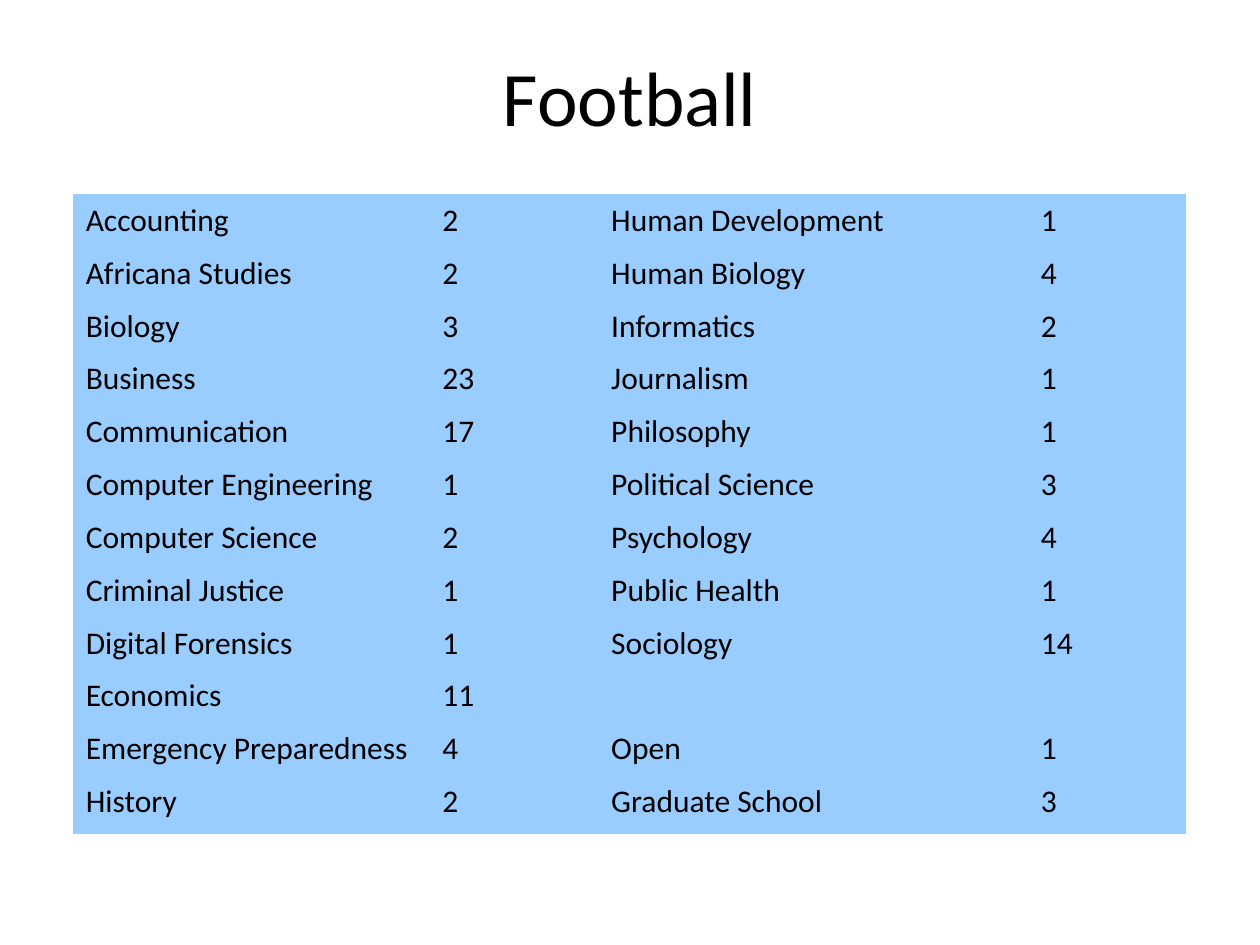
from dataclasses import dataclass

from pptx import Presentation
from pptx.dml.color import RGBColor
from pptx.enum.text import MSO_ANCHOR, PP_ALIGN
from pptx.util import Pt


@dataclass(frozen=True)
class Theme:
    font: str = "Calibri"
    text: RGBColor = RGBColor(0, 0, 0)
    fill: RGBColor = RGBColor(0x99, 0xCC, 0xFF)
    title_size: int = 44
    body_size: int = 18


NO_STYLE_NO_GRID = "{2D5ABB26-0587-4C30-8999-92F81FD0307C}"
COLUMN_WIDTHS = [203.8, 96.5, 245.5, 90]
ROW_HEIGHT, LAST_ROW_HEIGHT = 30.2, 33.8
MAJORS = [
    ("Accounting", "2", "Human Development", "1"),
    ("Africana Studies", "2", "Human Biology", "4"),
    ("Biology", "3", "Informatics", "2"),
    ("Business", "23", "Journalism", "1"),
    ("Communication", "17", "Philosophy", "1"),
    ("Computer Engineering", "1", "Political Science", "3"),
    ("Computer Science", "2", "Psychology", "4"),
    ("Criminal Justice", "1", "Public Health", "1"),
    ("Digital Forensics", "1", "Sociology", "14"),
    ("Economics", "11", "", ""),
    ("Emergency Preparedness", "4", "Open", "1"),
    ("History", "2", "Graduate School", "3"),
]
theme = Theme()


def style(para, size):
    for span in para.runs:
        span.font.name = theme.font
        span.font.size = Pt(size)
        span.font.color.rgb = theme.text


deck = Presentation()
deck.slide_width, deck.slide_height = Pt(720), Pt(540)
slide = deck.slides.add_slide(deck.slide_layouts[6])

title = slide.shapes.add_textbox(Pt(36), Pt(21.6), Pt(648), Pt(90)).text_frame
title.word_wrap = True
title.vertical_anchor = MSO_ANCHOR.TOP
title.margin_top = Pt(6.5)
title.text = "Football"
title.paragraphs[0].alignment = PP_ALIGN.CENTER
style(title.paragraphs[0], theme.title_size)

row_heights = [ROW_HEIGHT] * (len(MAJORS) - 1) + [LAST_ROW_HEIGHT]
table = slide.shapes.add_table(
    len(MAJORS), len(COLUMN_WIDTHS), Pt(41.8), Pt(110.9),
    Pt(sum(COLUMN_WIDTHS)), Pt(sum(row_heights)),
).table
table.first_row = table.horz_banding = False
table._tbl.tblPr[0].text = NO_STYLE_NO_GRID

for column, width in zip(table.columns, COLUMN_WIDTHS):
    column.width = Pt(width)

for row, height, entries in zip(table.rows, row_heights, MAJORS):
    row.height = Pt(height)
    for cell, entry in zip(row.cells, entries):
        cell.fill.solid()
        cell.fill.fore_color.rgb = theme.fill
        cell.margin_top = Pt(5)
        cell.margin_bottom = Pt(3.6)
        cell.text_frame.text = entry
        para = cell.text_frame.paragraphs[0]
        para.line_spacing = 0.93
        style(para, theme.body_size)

deck.save("out.pptx")
